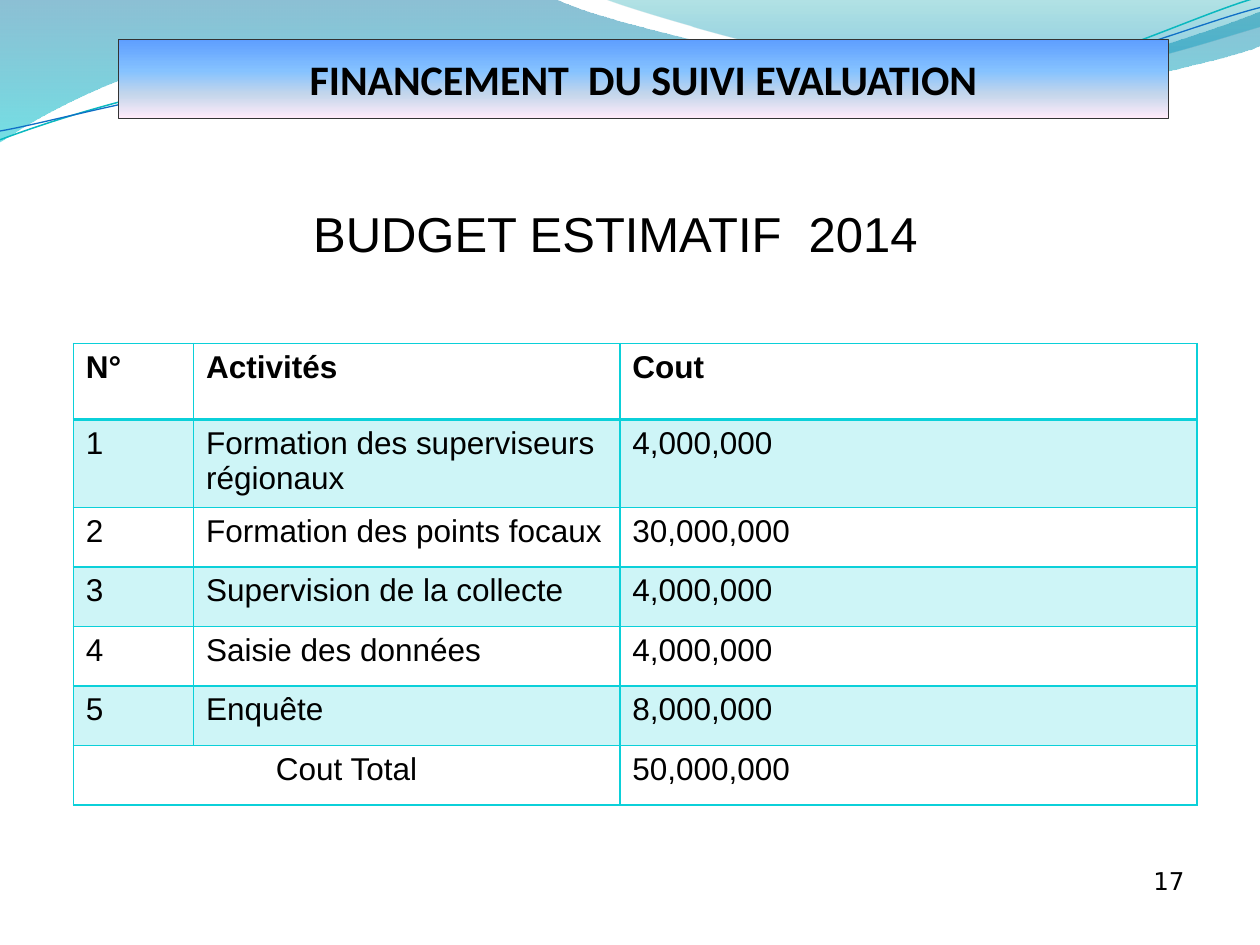
from pptx import Presentation
from pptx.dml.color import RGBColor
from pptx.enum.shapes import MSO_SHAPE
from pptx.enum.text import MSO_ANCHOR, PP_ALIGN
from pptx.oxml.ns import qn
from pptx.util import Pt
from lxml.etree import SubElement

CYAN = "0BD0D9"
BLACK = "000000"

# Each wave: start point, then cubic curves (two handles and an end) or straight ends.
UPPER_WAVE = [(0, -0.72), (316.8, -0.72),
              (342.72, 12.24, 478.08, 45.36, 545.76, 45.36),
              (614.16, 45.36, 689.76, 18.72, 720, 6.48), (720.72, 25.92),
              (707.76, 31.68, 626.4, 54.72, 537.12, 54),
              (447.84, 54, 275.04, 20.16, 185.04, 24.48),
              (92.88, 25.2, 33.12, 59.76, -0.72, 81.36)]
RIGHT_WAVE = [(344.88, -0.72),
              (366.48, 7.92, 491.04, 44.64, 553.68, 46.8),
              (616.32, 49.68, 691.92, 23.04, 720, 15.12), (720, 0)]
TEAL_LINE = [(0, 79.92),
             (34.56, 66.96, 113.76, 41.04, 199.44, 37.44),
             (284.4, 33.84, 426.96, 64.08, 513.36, 57.6),
             (599.76, 51.12, 675.36, 10.8, 718.56, -1.44)]
BLUE_LINE = [(0, 74.88),
             (33.84, 69.12, 118.08, 43.92, 203.76, 40.32),
             (290.16, 36.72, 429.84, 59.76, 516.24, 54),
             (601.92, 48.96, 677.52, 15.12, 720, 4.32)]

COLUMN_WIDTHS = [68.7, 243.6, 329.8]
ROW_HEIGHTS = [43.2, 50.4] + [34] * 5
ROWS = [
    ("N°", "Activités", "Cout"),
    ("1", "Formation des superviseurs régionaux", "4,000,000"),
    ("2", "Formation des points focaux", "30,000,000"),
    ("3", "Supervision de la collecte", "4,000,000"),
    ("4", "Saisie des données", "4,000,000"),
    ("5", "Enquête", "8,000,000"),
    ("Cout Total", "", "50,000,000"),
]


def colour(value):
    return RGBColor.from_string(value)


def set_values(target, values):
    for name, value in values.items():
        setattr(target, name, value)


def write(frame, text, size, font="Arial", bold=False, align=PP_ALIGN.LEFT):
    para = frame.paragraphs[0]
    para.alignment = align
    span = para.add_run()
    span.text = text
    set_values(span.font, {"name": font, "size": Pt(size), "bold": bold})
    span.font.color.rgb = colour(BLACK)


def add_alpha(colour_element, percent):
    SubElement(colour_element, qn("a:alpha"), val=str(percent * 1000))


def fill_gradient(shape, stops):
    """Fill from top to bottom; a stop is position, colour, opacity in percent."""
    shape.fill.gradient()
    shape.fill.gradient_angle = 270
    stop_list = shape._element.spPr.find(qn("a:gradFill")).find(qn("a:gsLst"))
    for stop in list(stop_list):
        stop_list.remove(stop)
    for position, value, opacity in stops:
        stop = SubElement(stop_list, qn("a:gs"), pos=str(position * 1000))
        tint = SubElement(stop, qn("a:srgbClr"), val=value)
        if opacity < 100:
            add_alpha(tint, opacity)


def set_line(shape, value, width):
    shape.line.color.rgb = colour(value)
    shape.line.width = Pt(width)


def bend(shape, segments):
    """Turn the straight steps of an outline into cubic curves where handles are given."""
    steps = list(shape._element.spPr.iter(qn("a:lnTo")))
    for step, segment in zip(steps, segments[1:]):
        if len(segment) == 2:
            continue
        curve = step.makeelement(qn("a:cubicBezTo"))
        for x, y in zip(segment[::2], segment[1::2]):
            SubElement(curve, qn("a:pt"), x=str(Pt(x) - shape.left), y=str(Pt(y) - shape.top))
        step.getparent().replace(step, curve)


def add_outline(page, segments, closed):
    points = [(Pt(segment[-2]), Pt(segment[-1])) for segment in segments]
    builder = page.shapes.build_freeform(*points[0], scale=1.0)
    builder.add_line_segments(points[1:], close=closed)
    shape = builder.convert_to_shape()
    shape.shadow.inherit = False
    bend(shape, segments)
    return shape


def add_wave(page, segments, stops):
    wave = add_outline(page, segments, True)
    fill_gradient(wave, stops)
    wave.line.fill.background()


def add_curve(page, segments, value, width):
    curve = add_outline(page, segments, False)
    curve.fill.background()
    set_line(curve, value, width)


def add_text(page, place, text, size, **style):
    box = page.shapes.add_textbox(*map(Pt, place))
    box.text_frame.word_wrap = True
    write(box.text_frame, text, size, **style)


def add_banner(page, place, text, stops):
    banner = page.shapes.add_shape(MSO_SHAPE.RECTANGLE, *map(Pt, place))
    banner.shadow.inherit = False
    fill_gradient(banner, stops)
    set_line(banner, "333333", 0.25)
    set_values(banner.text_frame, {"word_wrap": True, "vertical_anchor": MSO_ANCHOR.MIDDLE})
    write(banner.text_frame, text, 24, "Calibri", True, PP_ALIGN.CENTER)


def set_borders(cell, widths):
    properties = cell._tc.get_or_add_tcPr()
    for side, width in widths.items():
        line = SubElement(properties, qn("a:ln" + side), w=str(Pt(width)))
        SubElement(SubElement(line, qn("a:solidFill")), qn("a:srgbClr"), val=CYAN)


def fill_cell(cell, shaded):
    if not shaded:
        cell.fill.background()
        return
    cell.fill.solid()
    cell.fill.fore_color.rgb = colour(CYAN)
    add_alpha(cell._tc.tcPr.find(qn("a:solidFill"))[0], 20)


def add_budget_table(page, left, top):
    last = len(ROWS) - 1
    table = page.shapes.add_table(
        len(ROWS), len(COLUMN_WIDTHS), Pt(left), Pt(top),
        Pt(sum(COLUMN_WIDTHS)), Pt(sum(ROW_HEIGHTS))).table
    set_values(table, {"first_row": False, "horz_banding": False})
    for column, width in zip(table.columns, COLUMN_WIDTHS):
        column.width = Pt(width)
    for row, height in zip(table.rows, ROW_HEIGHTS):
        row.height = Pt(height)
    table.cell(last, 0).merge(table.cell(last, 1))
    for r, texts in enumerate(ROWS):
        for c, text in enumerate(texts):
            cell = table.cell(r, c)
            set_borders(cell, {"L": 1, "R": 1, "T": 2 if r == 1 else 1, "B": 2 if r == 0 else 1})
            fill_cell(cell, r % 2 == 1)
            if text:
                centred = r == last and c == 0
                write(cell.text_frame, text, 18, bold=r == 0,
                      align=PP_ALIGN.CENTER if centred else PP_ALIGN.LEFT)


def main():
    deck = Presentation()
    set_values(deck, {"slide_width": Pt(720), "slide_height": Pt(540)})
    page = deck.slides.add_slide(deck.slide_layouts[6])
    add_wave(page, UPPER_WAVE, [(0, "0074A1", 45), (100, "00C6CF", 55)])
    add_wave(page, RIGHT_WAVE, [(0, "00A1A9", 30), (80, "008BBF", 45)])
    add_curve(page, TEAL_LINE, "0AB8BF", 0.85)
    add_curve(page, BLUE_LINE, "0F6FC6", 0.75)
    add_text(page, (516.2, 491.3, 167.8, 36), "17", 14,
             font="DejaVu Sans", align=PP_ALIGN.RIGHT)
    add_banner(page, (67.7, 22.5, 600, 45), "FINANCEMENT  DU SUIVI EVALUATION",
               [(0, "5E9EFF", 100), (40, "85C2FF", 100),
                (70, "C4D6EB", 100), (100, "FFEBFA", 100)])
    add_text(page, (163.4, 112.7, 376.6, 41), "BUDGET ESTIMATIF  2014", 28,
             align=PP_ALIGN.CENTER)
    add_budget_table(page, 41.9, 196.4)
    deck.save("out.pptx")


if __name__ == "__main__":
    main()
